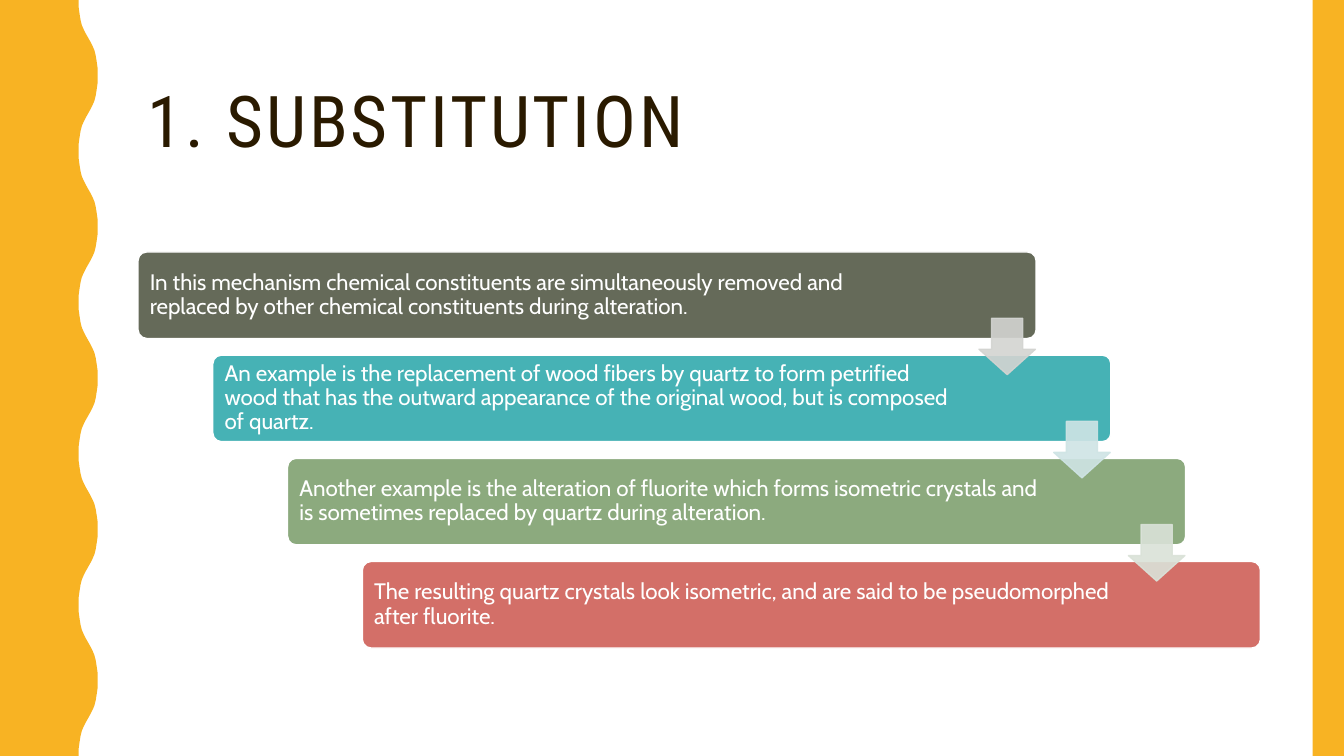
import pptx
import pptx.dml.color
import pptx.enum.shapes
import pptx.enum.text
import pptx.oxml
import pptx.oxml.ns
import pptx.util

Pt = pptx.util.Pt
SHAPE = pptx.enum.shapes.MSO_SHAPE
SLIDE_WIDTH, SLIDE_HEIGHT = 960, 540
YELLOW, BROWN, WHITE = "F8B323", "2A1A00", "FFFFFF"

# First quarter of one wave; the rest follows by symmetry
WAVE_QUARTER = [(56.2, 0), (56.2, 5), (56.9, 10), (57.6, 14.4),
                (58.5, 18), (59.8, 21), (61.3, 24)]
WAVE_MIDDLE, WAVE_LENGTH, WAVE_COUNT = 63, 108, 5

# Staircase of boxes
BOX_LEFT, BOX_TOP, BOX_WIDTH, BOX_HEIGHT = 98.6, 180, 641.5, 61.8
ARROW_LEFT, ARROW_TOP, ARROW_SIZE = 699.3, 227.3, 40.3
STEP_X, STEP_Y = 53.4, 73.7

# Text, box colour, right inset
STEPS = [
    ("In this mechanism chemical constituents are simultaneously removed and "
     "replaced by other chemical constituents during alteration.", "656A59", 76),
    ("An example is the replacement of wood fibers by quartz to form petrified "
     "wood that has the outward appearance of the original wood, but is "
     "composed of quartz.", "46B2B5", 101),
    ("Another example is the alteration of fluorite which forms isometric "
     "crystals and is sometimes replaced by quartz during alteration.",
     "8CAA7E", 101),
    ("The resulting quartz crystals look isometric, and are said to be "
     "pseudomorphed after fluorite.", "D36F68", 101),
]
ARROW_COLOURS = ["D3D4D1", "CFE4E5", "DAE2D8"]


def colour(hex_string):
    return pptx.dml.color.RGBColor.from_string(hex_string)


def paint(shape, fill, line=None):
    shape.shadow.inherit = False
    shape.fill.solid()
    shape.fill.fore_color.rgb = colour(fill)
    if line:
        shape.line.color.rgb = colour(line)
        shape.line.width = Pt(1)
    else:
        shape.line.fill.background()


def add_preset(slide, preset, left, top, width, height, fill, line=None):
    shape = slide.shapes.add_shape(
        preset, Pt(left), Pt(top), Pt(width), Pt(height))
    paint(shape, fill, line)
    return shape


def write(shape, text, font, size, text_colour):
    frame = shape.text_frame
    frame.word_wrap = True
    frame.vertical_anchor = pptx.enum.text.MSO_ANCHOR.MIDDLE
    para = frame.paragraphs[0]
    para.alignment = pptx.enum.text.PP_ALIGN.LEFT
    para.line_spacing = 0.9
    span = para.add_run()
    span.text = text
    span.font.name = font
    span.font.size = Pt(size)
    span.font.color.rgb = colour(text_colour)
    return span


def add_title(slide, text):
    box = slide.shapes.add_textbox(Pt(98.6), Pt(30), Pt(801.4), Pt(117.4))
    span = write(box, text, "Roboto Condensed", 51, BROWN)
    span.font._element.set("spc", "200")  # letter spacing of 2 pt


def add_wavy_edge(slide):
    half = WAVE_LENGTH / 2
    outward = WAVE_QUARTER + [(WAVE_MIDDLE, half / 2)] + [
        (2 * WAVE_MIDDLE - x, half - y) for x, y in reversed(WAVE_QUARTER)]
    inward = [(x, WAVE_LENGTH - y) for x, y in reversed(outward[:-1])]
    edge = [(x, y + wave * WAVE_LENGTH)
            for wave in range(WAVE_COUNT) for x, y in outward + inward]
    outline = edge + [(0, SLIDE_HEIGHT)]
    builder = slide.shapes.build_freeform(0, 0)
    builder.add_line_segments([(Pt(x), Pt(y)) for x, y in outline], close=True)
    paint(builder.convert_to_shape(), YELLOW)


def add_step(slide, index, text, fill, right_inset):
    box = add_preset(slide, SHAPE.ROUNDED_RECTANGLE,
                     BOX_LEFT + index * STEP_X, BOX_TOP + index * STEP_Y,
                     BOX_WIDTH, BOX_HEIGHT, fill, WHITE)
    box.adjustments[0] = 0.1
    frame = box.text_frame
    frame.margin_left, frame.margin_right = Pt(6.6), Pt(right_inset)
    frame.margin_top = frame.margin_bottom = Pt(4)
    write(box, text, "Cabin", 16, WHITE)


def add_arrow(slide, index, fill):
    arrow = add_preset(slide, SHAPE.DOWN_ARROW,
                       ARROW_LEFT + index * STEP_X, ARROW_TOP + index * STEP_Y,
                       ARROW_SIZE, ARROW_SIZE, fill, fill)
    arrow.adjustments[0], arrow.adjustments[1] = 0.55, 0.45
    # Fill and line are 90% opaque
    properties = arrow._element.spPr
    for tint in properties.iter(pptx.oxml.ns.qn("a:srgbClr")):
        alpha = pptx.oxml.parse_xml(
            f'<a:alpha {pptx.oxml.ns.nsdecls("a")} val="90000"/>')
        tint.append(alpha)


def main():
    deck = pptx.Presentation()
    deck.slide_width, deck.slide_height = Pt(SLIDE_WIDTH), Pt(SLIDE_HEIGHT)
    page = deck.slides.add_slide(deck.slide_layouts[6])

    # Title and side decoration
    add_title(page, "1. SUBSTITUTION")
    add_wavy_edge(page)
    add_preset(page, SHAPE.RECTANGLE, 937.6, 0, 22.4, SLIDE_HEIGHT, YELLOW)

    # Steps, then the arrows that lie over them
    for index, (text, fill, right_inset) in enumerate(STEPS):
        add_step(page, index, text, fill, right_inset)
    for index, fill in enumerate(ARROW_COLOURS):
        add_arrow(page, index, fill)

    deck.save("out.pptx")


if __name__ == "__main__":
    main()
